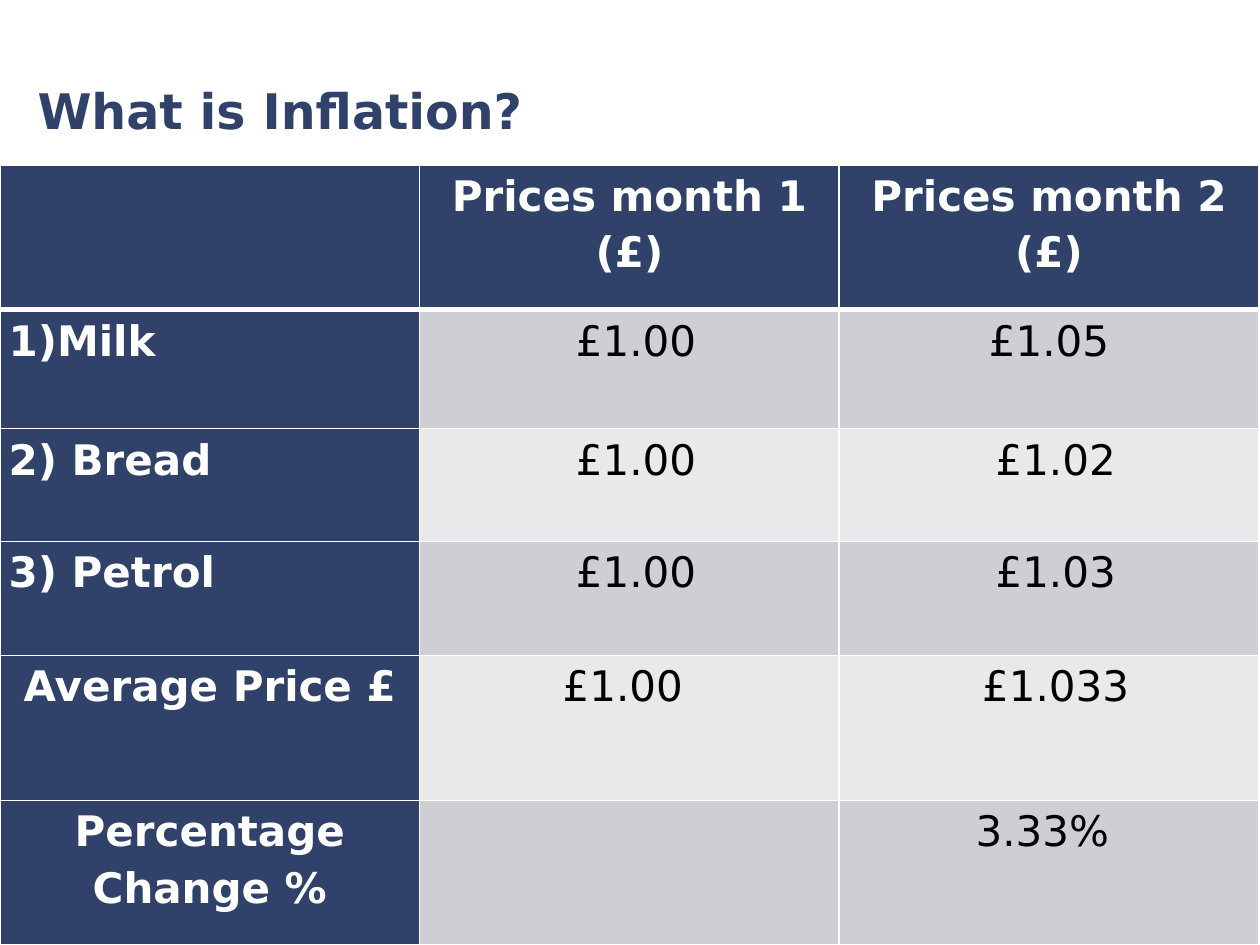
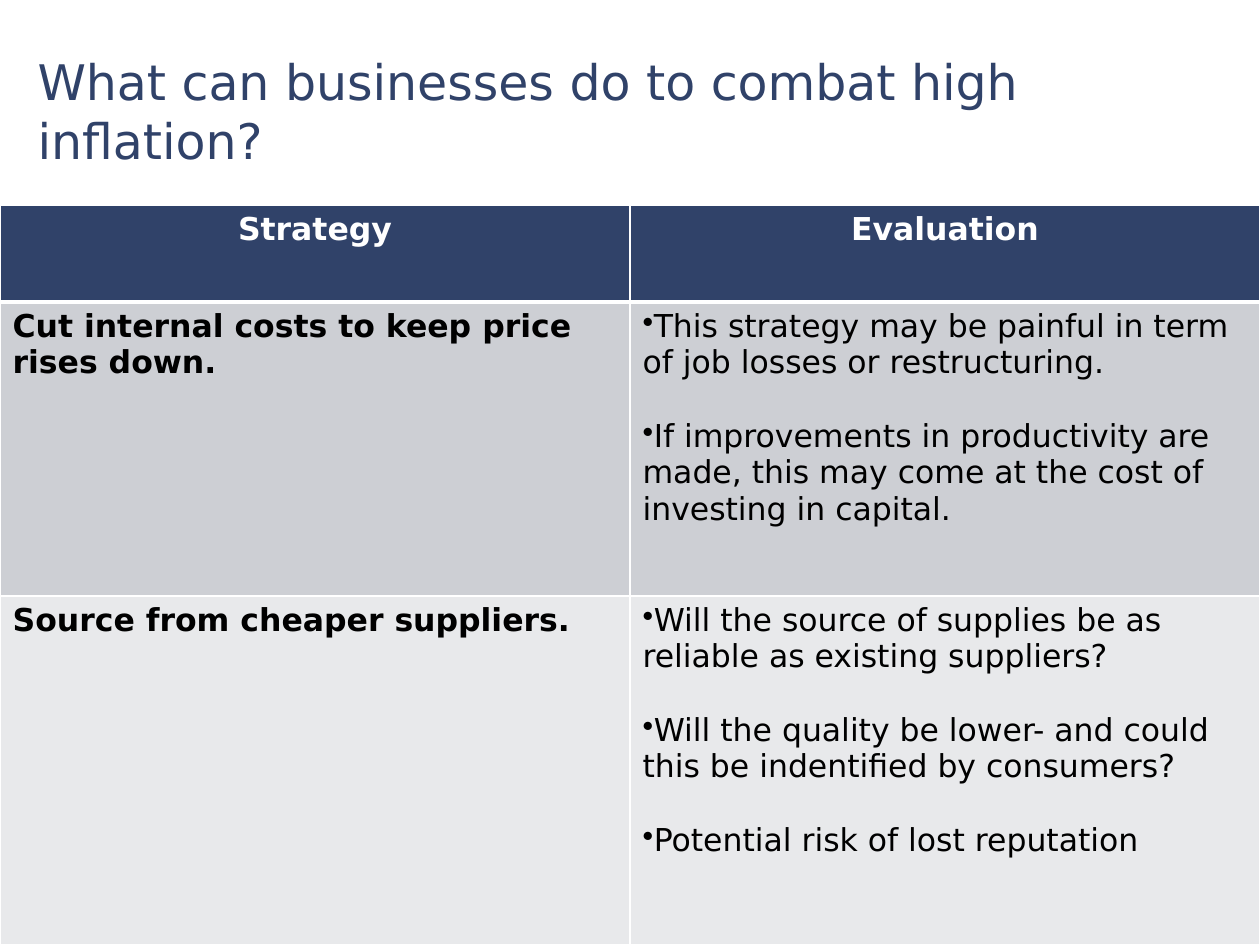
from lxml.etree import SubElement
from pptx import Presentation
from pptx.dml.color import RGBColor
from pptx.enum.text import MSO_ANCHOR, PP_ALIGN
from pptx.oxml.ns import qn
from pptx.util import Pt

FONT = "DejaVu Sans"
NAVY, WHITE, BLACK = "304269", "FFFFFF", "000000"
BANDS = ["CDCFD4", "E8E9EB"]
LEFT, CENTER = PP_ALIGN.LEFT, PP_ALIGN.CENTER
SLIDE_WIDTH, SLIDE_HEIGHT = 720, 540

PRICES = [
    ["", "Prices month 1 (£)", "Prices month 2 (£)"],
    ["Milk", " £1.00", "£1.05"],
    ["2) Bread", " £1.00", " £1.02"],
    ["3) Petrol", " £1.00", " £1.03"],
    ["Average Price £", "£1.00 ", " £1.033"],
    ["Percentage Change %", "", "3.33% "],
]
STRATEGIES = [
    ("Cut internal costs to keep price rises down.", [
        "This strategy may be painful in term of job losses or restructuring.",
        "If improvements in productivity are made, this may come at the cost of investing in capital.",
    ]),
    ("Source from cheaper suppliers.", [
        "Will the source of supplies be as reliable as existing suppliers?",
        "Will the quality be lower- and could this be indentified by consumers?",
        "Potential risk of lost reputation",
    ]),
]


def rgb(value):
    return RGBColor.from_string(value)


def add_bullet(paragraph, tag, attribute, value, indent):
    properties = paragraph._p.get_or_add_pPr()
    properties.set("marL", str(Pt(indent)))
    properties.set("indent", str(-Pt(indent)))
    SubElement(properties, qn(tag)).set(attribute, value)


def write_text(frame, lines, size=18, color=BLACK, bold=False, align=LEFT,
               spacing=None, gap=0, bullet=None):
    for index, line in enumerate(lines):
        paragraph = frame.add_paragraph() if index else frame.paragraphs[0]
        if bullet:
            add_bullet(paragraph, *bullet)
        paragraph.alignment = align
        if spacing:
            paragraph.line_spacing = spacing
        if index:
            paragraph.space_before = Pt(gap)
        run = paragraph.add_run()
        run.text = line
        run.font.name = FONT
        run.font.size = Pt(size)
        run.font.bold = bold
        run.font.color.rgb = rgb(color)


def add_title(slide, title, bold=False):
    frame = slide.shapes.add_textbox(Pt(14.4), Pt(18), Pt(669.6), Pt(90)).text_frame
    frame.word_wrap = True
    frame.vertical_anchor = MSO_ANCHOR.MIDDLE
    write_text(frame, [title], size=28, color=NAVY, bold=bold)


def set_borders(cell, top, bottom):
    properties = cell._tc.get_or_add_tcPr()
    sides = [("a:lnL", 1), ("a:lnR", 1), ("a:lnT", top), ("a:lnB", bottom)]
    for position, (side, width) in enumerate(sides):
        line = SubElement(properties, qn(side), w=str(Pt(width)))
        fill = SubElement(line, qn("a:solidFill"))
        SubElement(fill, qn("a:srgbClr"), val=WHITE)
        properties.insert(position, line)


def add_grid(slide, top, width, heights, columns, navy_first_column=False):
    table = slide.shapes.add_table(len(heights), columns, Pt(0), Pt(top),
                                   Pt(width), Pt(sum(heights))).table
    table.first_row = table.horz_banding = False
    for column in table.columns:
        column.width = Pt(width / columns)
    for row, height in enumerate(heights):
        table.rows[row].height = Pt(height)
        for column in range(columns):
            cell = table.cell(row, column)
            is_navy = row == 0 or (navy_first_column and column == 0)
            cell.fill.solid()
            cell.fill.fore_color.rgb = rgb(NAVY if is_navy else BANDS[(row - 1) % 2])
            set_borders(cell, 3 if row == 1 else 1, 3 if row == 0 else 1)
    return table


def add_price_table(slide):
    table = add_grid(slide, 94.5, 719.4, [82.5, 68, 64.5, 65, 83, 82.5], 3, True)
    for row, entries in enumerate(PRICES):
        for column, entry in enumerate(entries):
            cell = table.cell(row, column)
            cell.margin_left = cell.margin_right = Pt(5)
            cell.margin_top = cell.margin_bottom = Pt(0)
            if not entry:
                continue
            heading = row == 0 or column == 0
            item = column == 0 and row <= 3
            number = ("a:buAutoNum", "type", "arabicParenR", 27) if entry == "Milk" else None
            write_text(cell.text_frame, [entry], size=24, bold=heading, spacing=1.15,
                       color=WHITE if heading else BLACK,
                       align=LEFT if item else CENTER, bullet=number)


def add_strategy_table(slide):
    table = add_grid(slide, 117, SLIDE_WIDTH, [55.5, 168, 199.5], 2)
    for column, heading in enumerate(["Strategy", "Evaluation"]):
        write_text(table.cell(0, column).text_frame, [heading],
                   color=WHITE, bold=True, align=CENTER)
    for row, (strategy, evaluation) in enumerate(STRATEGIES, start=1):
        write_text(table.cell(row, 0).text_frame, [strategy], bold=True)
        write_text(table.cell(row, 1).text_frame, evaluation, gap=21,
                   bullet=("a:buChar", "char", "•", 0))


def main():
    deck = Presentation()
    deck.slide_width, deck.slide_height = Pt(SLIDE_WIDTH), Pt(SLIDE_HEIGHT)
    blank = deck.slide_layouts[6]

    inflation = deck.slides.add_slide(blank)
    add_title(inflation, "What is Inflation?", bold=True)
    add_price_table(inflation)

    responses = deck.slides.add_slide(blank)
    add_title(responses, "What can businesses do to combat high inflation?")
    add_strategy_table(responses)

    deck.save("out.pptx")


if __name__ == "__main__":
    main()
